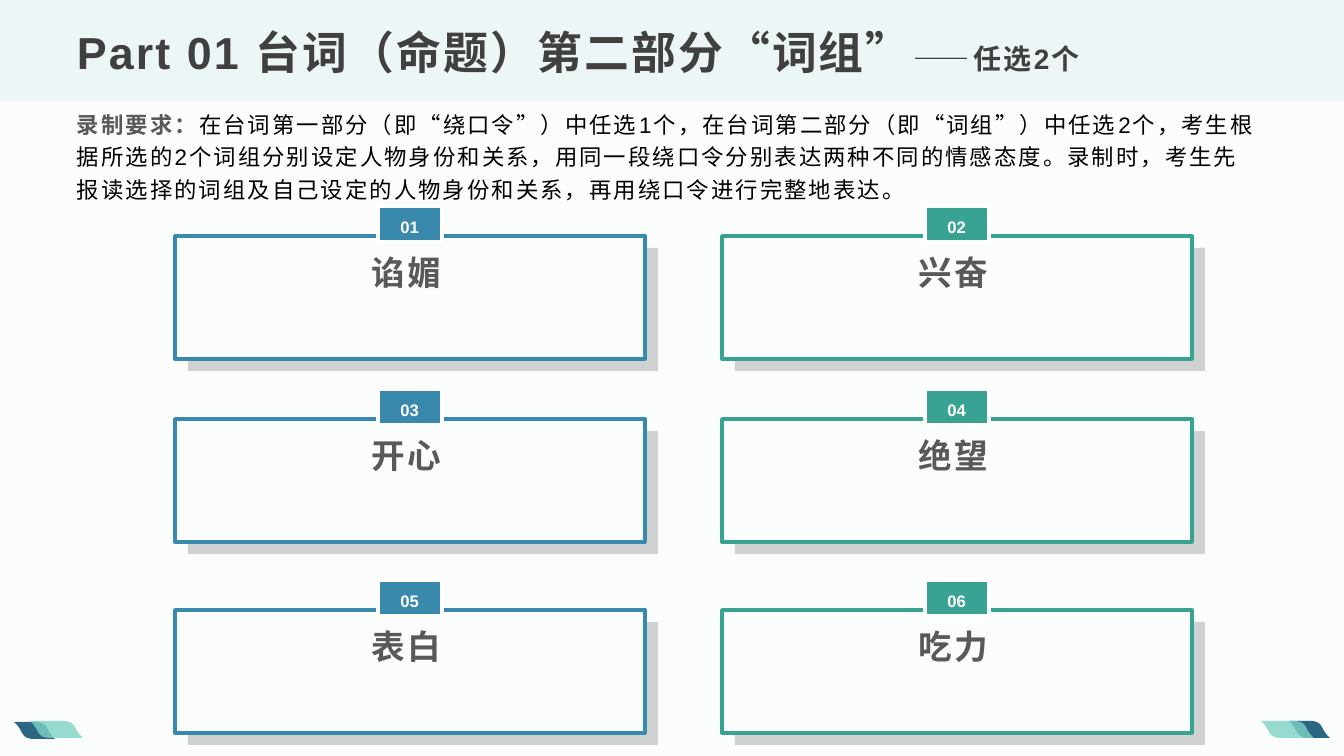
import pptx
import pptx.util
import pptx.dml.color
import pptx.enum.lang
import pptx.enum.shapes
import pptx.enum.text
import pptx.oxml
import pptx.oxml.ns
from dataclasses import dataclass

TITLE = [("Part 01 台词（命题）第二部分“词组”", {}), ("——任选2个", {"size": 20})]
RULES = [
    ("录制要求：", {"bold": True, "color": "595959"}),
    ("在台词第一部分（即“绕口令”）中任选1个，在台词第二部分（即“词组”）中任选2个，"
     "考生根据所选的2个词组分别设定人物身份和关系，用同一段绕口令分别表达两种不同的情感态度。"
     "录制时，考生先报读选择的词组及自己设定的人物身份和关系，再用绕口令进行完整地表达。", {}),
]
WORDS = ["谄媚", "兴奋", "开心", "绝望", "表白", "吃力"]
COLS = [175, 722]
ROWS = [236, 419, 610]
CARD = (470, 123)
LEAF_H = 17


@dataclass
class Theme:
    font: str = "Arial"
    page: str = "FBFCFC"
    band: str = "EDF6F7"
    head: str = "404040"
    gray: str = "595959"
    ink: str = "000000"
    white: str = "FFFFFF"
    shade: str = "BFBFBF"
    navy: str = "2B6782"
    mint: str = "7DD2C6"
    cards: tuple = ("3989AD", "38A293")
    big: float = 32
    word: float = 24
    body: float = 16
    tag: float = 11.9


T = Theme()
ALIGN = pptx.enum.text.PP_ALIGN
ANCHOR = pptx.enum.text.MSO_ANCHOR


def px(n):
    return round(n * 914400 / 100.8)


def rgb(code):
    return pptx.dml.color.RGBColor.from_string(code)


def paint(shape, fill, alpha=None, line=None, width=0):
    shape.shadow.inherit = False
    shape.fill.solid()
    shape.fill.fore_color.rgb = rgb(fill)
    if alpha:
        tone = shape.fill._xPr.find(".//" + pptx.oxml.ns.qn("a:srgbClr"))
        ns = pptx.oxml.ns.nsdecls("a")
        tone.append(pptx.oxml.parse_xml(f'<a:alpha {ns} val="{alpha * 1000}"/>'))
    if line:
        shape.line.color.rgb = rgb(line)
        shape.line.width = pptx.util.Pt(width)
    else:
        shape.line.fill.background()


def rect(slide, x, y, w, h, fill, **look):
    kind = pptx.enum.shapes.MSO_SHAPE.RECTANGLE
    paint(slide.shapes.add_shape(kind, px(x), px(y), px(w), px(h)), fill, **look)


def write(shape, runs, size, color, bold=True, align=ALIGN.LEFT,
          anchor=ANCHOR.TOP, lead=1.2, track=150, pads=(10, 5, 10, 5)):
    """Fill a shape with (text, changes) runs; changes override the format."""
    frame = shape.text_frame
    frame.word_wrap = True
    frame.auto_size = pptx.enum.text.MSO_AUTO_SIZE.NONE
    frame.vertical_anchor = anchor
    (frame.margin_left, frame.margin_top,
     frame.margin_right, frame.margin_bottom) = map(px, pads)
    para = frame.paragraphs[0]
    para.alignment = align
    para.line_spacing = lead
    for words, change in runs:
        run = para.add_run()
        run.text = words
        font = run.font
        font.name = T.font
        font.size = pptx.util.Pt(change.get("size", size))
        font.bold = change.get("bold", bold)
        font.color.rgb = rgb(change.get("color", color))
        font.language_id = pptx.enum.lang.MSO_LANGUAGE_ID.SIMPLIFIED_CHINESE
        if track:
            run._r.get_or_add_rPr().set("spc", str(track))


def label(slide, x, y, w, h, runs, **form):
    write(slide.shapes.add_textbox(px(x), px(y), px(w), px(h)), runs, **form)


def curve(a, b, c, d, steps=8):
    """Points on a cubic curve from a to d."""
    out = []
    for i in range(steps + 1):
        t = i / steps
        u = 1 - t
        out.append(tuple(u**3 * p + 3 * u * u * t * q + 3 * u * t * t * r + t**3 * s
                         for p, q, r, s in zip(a, b, c, d)))
    return out


def leaf(slide, x, y, w, fill, alpha=None):
    """Slanted leaf; its second half is the first turned by 180 degrees."""
    mid = (w - 7, 8)
    half = [(0, 0)]
    half += curve((w - 18, 0), (w - 12, 1), (w - 10, 2), mid)
    half += curve(mid, (w - 4, 14), (w, LEAF_H), (w, LEAF_H))
    pts = half + [(w - a, LEAF_H - b) for a, b in half]
    pts = [(px(x + a), px(y + b)) for a, b in pts]
    pen = slide.shapes.build_freeform(*pts[0])
    pen.add_line_segments(pts[1:], close=True)
    paint(pen.convert_to_shape(), fill, alpha)


def card(slide, x, y, num, word, color):
    w, h = CARD
    rect(slide, x + 13, y + 12, w, h, T.shade, alpha=70)
    rect(slide, x, y, w, h, T.page, line=color, width=2.5)
    rect(slide, x + 203, y - 30, 64, 36, color, line=T.white, width=3.5)
    label(slide, x + 209, y - 28, 51, 35, [(f"{num:02}", {})], size=T.tag,
          color=T.white, align=ALIGN.CENTER, track=0)
    label(slide, x - 4, y - 4, w, 78, [(word, {})], size=T.word, color=T.gray,
          align=ALIGN.CENTER, anchor=ANCHOR.MIDDLE, pads=(10, 0, 10, 5))


def main():
    deck = pptx.Presentation()
    deck.slide_width, deck.slide_height = px(1344), px(756)
    slide = deck.slides.add_slide(deck.slide_layouts.get_by_name("Title Only"))
    slide.background.fill.solid()
    slide.background.fill.fore_color.rgb = rgb(T.page)

    rect(slide, 0, 0, 1344, 101, T.band)
    leaf(slide, 14, 722, 41, T.navy)
    leaf(slide, 30, 721, 53, T.mint, 80)
    leaf(slide, 1289, 721, 41, T.navy)
    leaf(slide, 1261, 721, 53, T.mint, 80)

    title = slide.shapes.title
    slide.shapes.element.append(title.element)  # bring in front of the band
    title.left, title.top, title.width, title.height = map(px, (67, 17, 1210, 67))
    write(title, TITLE, size=T.big, color=T.head, anchor=ANCHOR.BOTTOM, lead=0.9)
    label(slide, 67, 101, 1203, 108, RULES, size=T.body, color=T.ink, bold=False)

    for i, word in enumerate(WORDS):
        row, col = divmod(i, len(COLS))
        card(slide, COLS[col], ROWS[row], i + 1, word, T.cards[col])
    deck.save("out.pptx")


if __name__ == "__main__":
    main()
